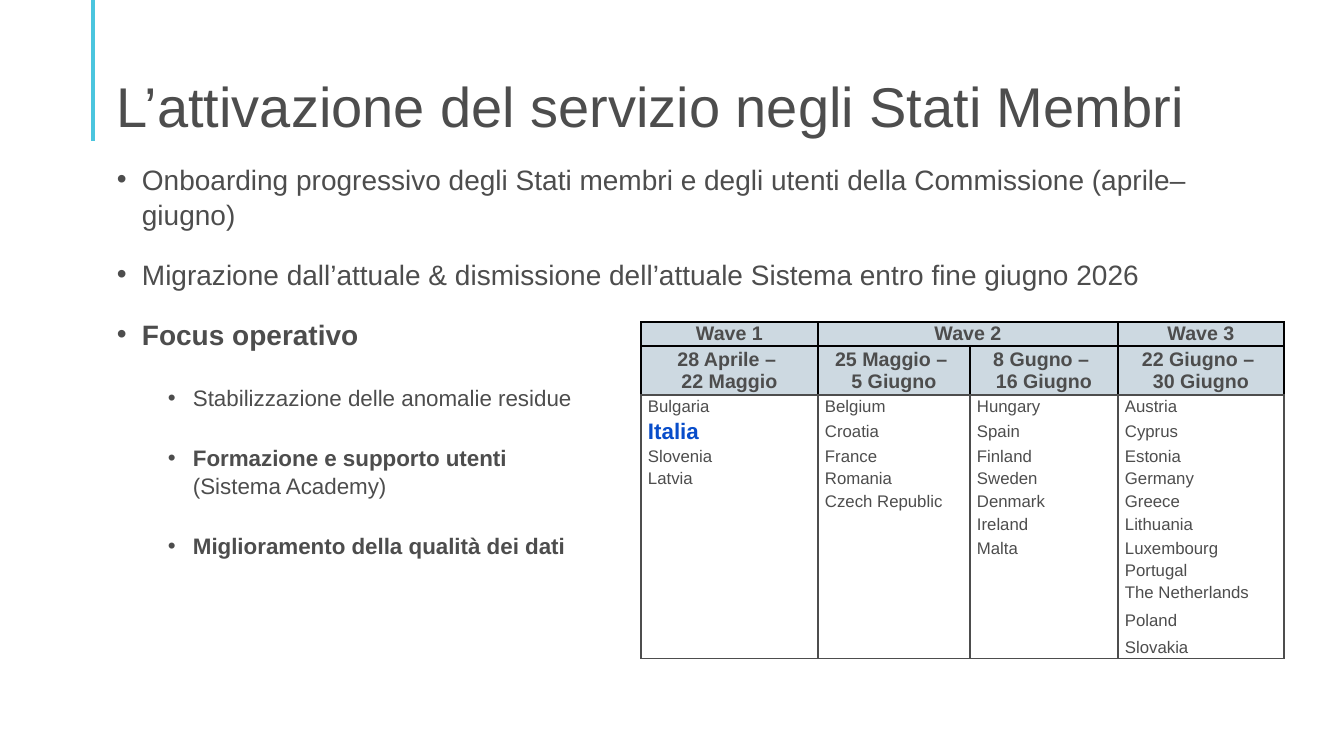
"""Build the slide on activating the service in the Member States."""
import itertools

import lxml.etree
import pptx
import pptx.dml.color
import pptx.enum.shapes
import pptx.enum.text
import pptx.oxml.ns
import pptx.util

PX = 914400 / 100.8
FONT = "Arial"
GREY = pptx.dml.color.RGBColor(0x4D, 0x4D, 0x4D)
BLACK = pptx.dml.color.RGBColor(0, 0, 0)
CYAN = pptx.dml.color.RGBColor(0x4B, 0xC5, 0xDE)
BLUE = pptx.dml.color.RGBColor(0x08, 0x4D, 0xCA)
HEADER_FILL = pptx.dml.color.RGBColor(0xCD, 0xD9, 0xE1)

BULLETS = [
    (0, "Onboarding progressivo degli Stati membri e degli utenti della Commissione (aprile–giugno)", False),
    (0, "Migrazione dall’attuale & dismissione dell’attuale Sistema entro fine giugno 2026", False),
    (0, "Focus operativo", True),
    (1, "Stabilizzazione delle anomalie residue", False),
    (1, "Formazione e supporto utenti \v(Sistema Academy)", True),
    (1, "Miglioramento della qualità dei dati", True),
]
WAVES = ["Wave 1", "Wave 2", "", "Wave 3"]
DATES = ["28 Aprile – \n22 Maggio", "25 Maggio – \n5 Giugno",
         "8 Gugno – \n16 Giugno", "22 Giugno – \n30 Giugno"]
COUNTRIES = [
    ["Bulgaria", "Italia", "Slovenia", "Latvia"],
    ["Belgium", "Croatia", "France", "Romania", "Czech Republic"],
    ["Hungary", "Spain", "Finland", "Sweden", "Denmark", "Ireland", "Malta"],
    ["Austria", "Cyprus", "Estonia", "Germany", "Greece", "Lithuania",
     "Luxembourg", "Portugal", "The Netherlands", "Poland", "Slovakia"],
]
COLUMN_WIDTHS = [177, 152, 148, 166]
ROW_HEIGHTS = [24, 49, 23, 25, 23, 22, 23, 24, 23, 22, 22, 33, 22]


def px(length):
    return pptx.util.Emu(round(length * PX))


def add_element(parent, tag, **attributes):
    return lxml.etree.SubElement(parent, pptx.oxml.ns.qn(tag), **attributes)


def format_span(span, size, color=GREY, bold=False):
    span.font.name = FONT
    span.font.size = pptx.util.Pt(size)
    span.font.color.rgb = color
    span.font.bold = bold


def add_text_frame(page, left, top, width, height):
    frame = page.shapes.add_textbox(px(left), px(top), px(width), px(height)).text_frame
    frame.word_wrap = True
    return frame


def add_accent_line(page):
    line = page.shapes.add_connector(
        pptx.enum.shapes.MSO_CONNECTOR.STRAIGHT, px(93), px(0), px(93), px(141))
    line.line.color.rgb = CYAN
    line.line.width = pptx.util.Pt(2.25)
    add_element(line._element.spPr, "a:effectLst")


def add_title(page, text):
    frame = add_text_frame(page, 107, 53, 1159, 87)
    frame.vertical_anchor = pptx.enum.text.MSO_ANCHOR.BOTTOM
    frame.margin_bottom = 0
    frame.text = text
    frame.paragraphs[0].line_spacing = 0.9
    format_span(frame.paragraphs[0].runs[0], 40)


def format_bullet(para, level):
    para.level = level
    properties = para._p.get_or_add_pPr()
    properties.set("marL", str(px(76 if level else 25)))
    properties.set("indent", str(px(-25)))
    color = add_element(properties, "a:buClr")
    add_element(color, "a:srgbClr", val=str(GREY))
    add_element(properties, "a:buFont", typeface=FONT)
    add_element(properties, "a:buChar", char="•")
    para.line_spacing = 1.04
    para.space_after = pptx.util.Pt(18)
    if level:
        para.space_before = pptx.util.Pt(5)


def add_bullets(page):
    frame = add_text_frame(page, 107, 156, 1159, 600)
    for index, (level, text, bold) in enumerate(BULLETS):
        para = frame.add_paragraph() if index else frame.paragraphs[0]
        para.text = text
        format_bullet(para, level)
        size = 16 if level else 20
        for line, span in enumerate(para.runs):
            format_span(span, size, bold=bold and line == 0)
        for line_break in para._p.findall(pptx.oxml.ns.qn("a:br")):
            add_element(line_break, "a:rPr", sz=str(size * 100))


def set_borders(cell, colors):
    properties = cell._tc.get_or_add_tcPr()
    for side, color in zip("LRTB", colors):
        border = add_element(properties, f"a:ln{side}", w=str(pptx.util.Pt(1)))
        if color is None:
            add_element(border, "a:noFill")
        else:
            fill = add_element(border, "a:solidFill")
            add_element(fill, "a:srgbClr", val=str(color))


def format_cell(cell, text, row):
    header = row < 2
    cell.margin_left = cell.margin_right = px(7)
    cell.margin_top = cell.margin_bottom = 0
    cell.vertical_anchor = pptx.enum.text.MSO_ANCHOR.MIDDLE
    if header:
        set_borders(cell, [BLACK, BLACK, BLACK, GREY if row else BLACK])
        cell.fill.solid()
        cell.fill.fore_color.rgb = HEADER_FILL
    else:
        last = row == len(ROW_HEIGHTS) - 1
        set_borders(cell, [GREY, GREY, GREY if row == 2 else None, GREY if last else None])
        cell.fill.background()
    cell.text_frame.text = text
    for para in cell.text_frame.paragraphs:
        if header:
            para.alignment = pptx.enum.text.PP_ALIGN.CENTER
        for span in para.runs:
            if text == "Italia":
                format_span(span, 16, BLUE, True)
            else:
                format_span(span, 14 if header else 12, bold=header)
        if not text:
            add_element(para._p, "a:endParaRPr", sz="1200")


def add_wave_table(page):
    rows = [WAVES, DATES, *itertools.zip_longest(*COUNTRIES, fillvalue="")]
    table = page.shapes.add_table(
        len(rows), len(WAVES), px(641), px(322),
        px(sum(COLUMN_WIDTHS)), px(sum(ROW_HEIGHTS))).table
    table.first_row = table.horz_banding = False
    for column, width in zip(table.columns, COLUMN_WIDTHS):
        column.width = px(width)
    for row, height in zip(table.rows, ROW_HEIGHTS):
        row.height = px(height)
    for row, texts in enumerate(rows):
        for column, text in enumerate(texts):
            format_cell(table.cell(row, column), text, row)
    table.cell(0, 1).merge(table.cell(0, 2))


def main():
    deck = pptx.Presentation()
    deck.slide_width, deck.slide_height = px(1344), px(756)
    page = deck.slides.add_slide(deck.slide_layouts[6])
    add_accent_line(page)
    add_bullets(page)
    add_title(page, "L’attivazione del servizio negli Stati Membri")
    add_wave_table(page)
    deck.save("out.pptx")


if __name__ == "__main__":
    main()
